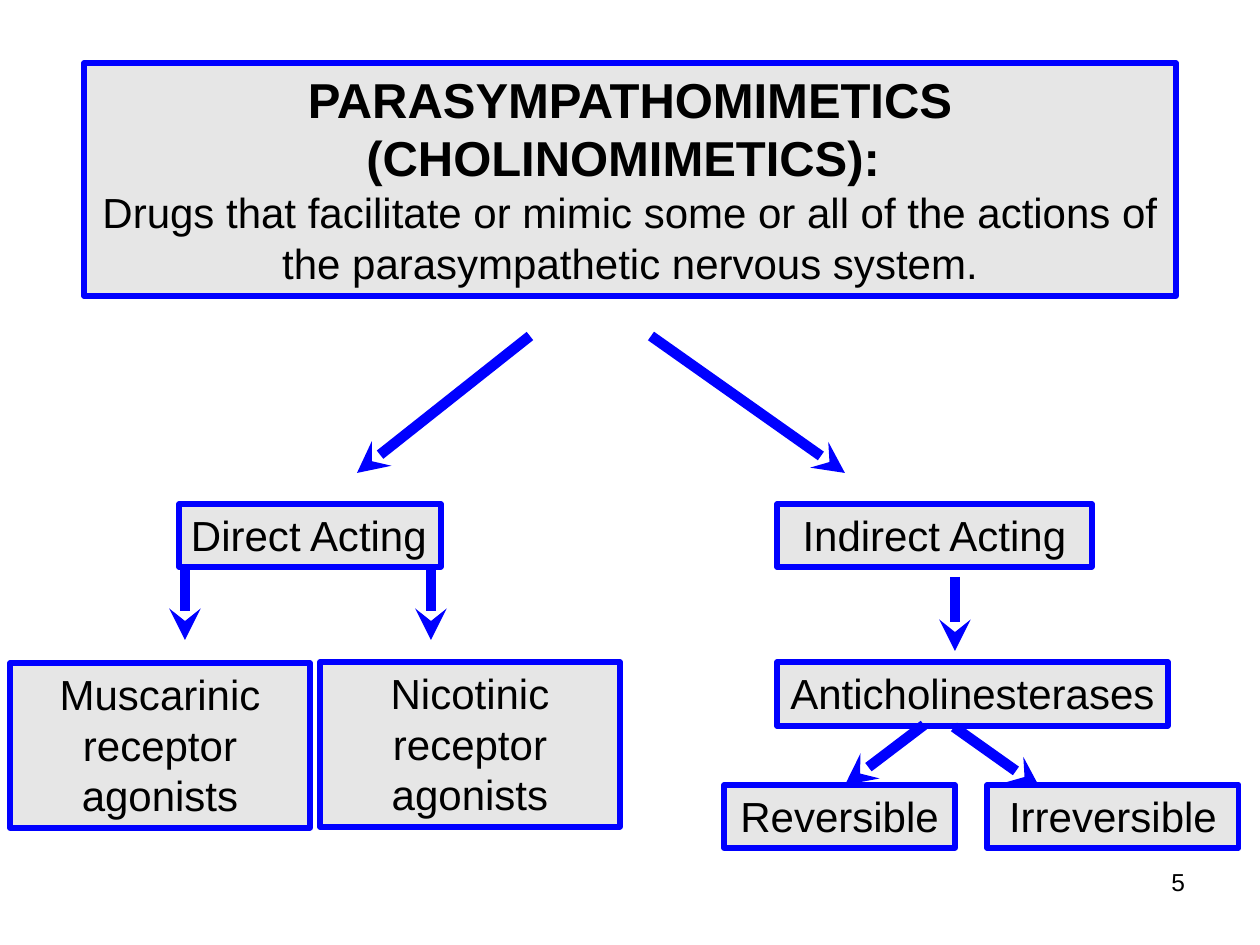
from lxml.etree import SubElement
from pptx import Presentation
from pptx.dml.color import RGBColor
from pptx.enum.shapes import MSO_CONNECTOR, MSO_SHAPE
from pptx.enum.text import MSO_ANCHOR, MSO_AUTO_SIZE, PP_ALIGN
from pptx.oxml.ns import qn
from pptx.util import Pt

PX = 914400 // 126  # EMU in one px
BLUE = RGBColor(0x00, 0x00, 0xFF)
GREY = RGBColor(0xE6, 0xE6, 0xE6)
BLACK = RGBColor(0x00, 0x00, 0x00)

FRAME = {
    "word_wrap": True, "auto_size": MSO_AUTO_SIZE.NONE,
    "vertical_anchor": MSO_ANCHOR.TOP,
    "margin_left": 12 * PX, "margin_right": 12 * PX,
    "margin_top": 6 * PX, "margin_bottom": 6 * PX,
}


def apply(item, form):
    for name, value in form.items():
        setattr(item, name, value)


def write(shape, lines, align=PP_ALIGN.CENTER):
    """Fill a shape with (text, size, bold) paragraphs."""
    frame = shape.text_frame
    apply(frame, FRAME)
    for i, (text, size, bold) in enumerate(lines):
        para = frame.add_paragraph() if i else frame.paragraphs[0]
        para.alignment = align
        run = para.add_run()
        run.text = text
        apply(run.font, {"name": "Arial", "size": Pt(size), "bold": bold})
        run.font.color.rgb = BLACK


def paint(shape):
    shape.fill.solid()
    shape.fill.fore_color.rgb = GREY
    shape.line.color.rgb = BLUE
    shape.line.width = Pt(3)


def add_box(slide, box, text, align=PP_ALIGN.CENTER):
    shape = slide.shapes.add_shape(MSO_SHAPE.RECTANGLE, *(n * PX for n in box))
    shape.shadow.inherit = False
    paint(shape)
    write(shape, [(text, 24, False)], align)


def add_arrow(slide, ends):
    arrow = slide.shapes.add_connector(MSO_CONNECTOR.STRAIGHT, *(n * PX for n in ends))
    arrow.line.color.rgb = BLUE
    arrow.line.width = Pt(6)
    SubElement(arrow.line._get_or_add_ln(), qn("a:tailEnd"), type="stealth")
    SubElement(arrow._element.spPr, qn("a:effectLst"))


def add_head(slide, box):
    title = slide.shapes.title
    apply(title, dict(zip(("left", "top", "width", "height"), (n * PX for n in box))))
    paint(title)
    write(title, [
        ("PARASYMPATHOMIMETICS (CHOLINOMIMETICS): ", 28, True),
        ("Drugs that facilitate or mimic some or all of the actions of "
         "the parasympathetic nervous system.", 24, False),
    ])


def add_forks(slide, x, y):
    """Arrows from the definition to both branches."""
    for start, end in ((173, 0), (294, 488)):
        add_arrow(slide, (x + start, y, x + end, y + 137))


def add_direct(slide, x, y):
    add_box(slide, (x + 169, y, 262, 63), "Direct Acting", PP_ALIGN.LEFT)
    kinds = ("Muscarinic", 0, 159, 175), ("Nicotinic", 310, 158, 421)
    for name, left, top, stem in kinds:
        add_box(slide, (x + left, y + top, 300, 165), f"{name} receptor agonists")
        add_arrow(slide, (x + stem, y + 63, x + stem, y + 136))


def add_indirect(slide, x, y):
    boxes = (
        ("Indirect Acting", 53, 0, 315, 63),
        ("Anticholinesterases", 53, 158, 391, 64),
        ("Reversible", 0, 281, 231, 63),
        ("Irreversible", 263, 281, 252, 63),
    )
    for text, left, top, width, height in boxes:
        add_box(slide, (x + left, y + top, width, height), text)
    arrows = (231, 73, 231, 147), (200, 221, 121, 281), (230, 223, 316, 284)
    for a, b, c, d in arrows:
        add_arrow(slide, (x + a, y + b, x + c, y + d))


def add_page(slide, box):
    label = slide.shapes.add_textbox(*(n * PX for n in box))
    write(label, [("5", 14, False)], PP_ALIGN.RIGHT)


def main():
    deck = Presentation()
    apply(deck, {"slide_width": 1260 * PX, "slide_height": 945 * PX})
    slide = deck.slides.add_slide(deck.slide_layouts[5])
    add_head(slide, (84, 63, 1092, 233))
    add_forks(slide, 357, 336)
    add_direct(slide, 10, 504)
    add_indirect(slide, 724, 504)
    add_page(slide, (903, 861, 294, 65))
    deck.save("out.pptx")


if __name__ == "__main__":
    main()
